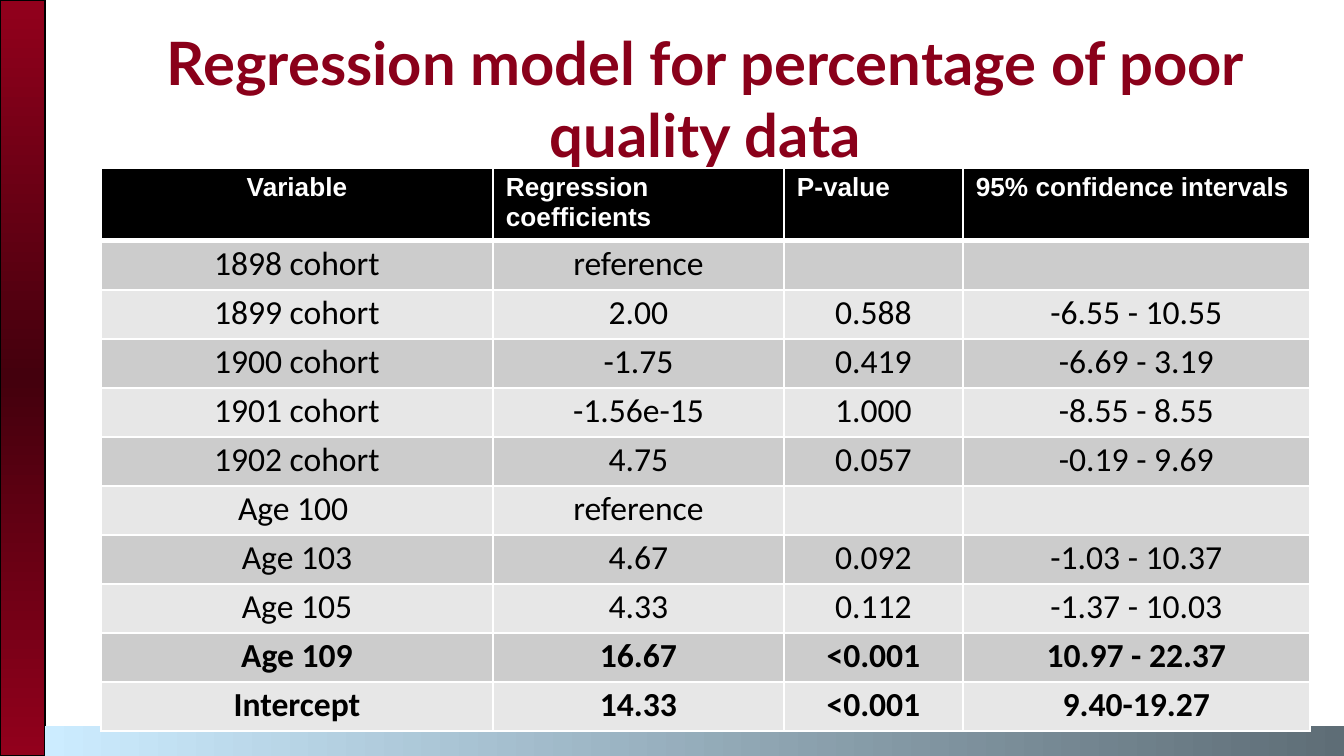
from lxml.etree import SubElement
from pptx import Presentation
from pptx.dml.color import RGBColor
from pptx.enum.shapes import MSO_SHAPE
from pptx.enum.text import MSO_ANCHOR, PP_ALIGN
from pptx.oxml.ns import qn
from pptx.util import Pt

PX = 914400 / 134.4
BLACK = RGBColor(0x00, 0x00, 0x00)
WHITE = RGBColor(0xFF, 0xFF, 0xFF)
CRIMSON = RGBColor(0x8A, 0x00, 0x1A)
RED = RGBColor(0x92, 0x00, 0x1C)
MAROON = RGBColor(0x44, 0x00, 0x0D)
SKY = RGBColor(0xCC, 0xEC, 0xFF)
SLATE = RGBColor(0x5E, 0x6D, 0x76)
BANDS = [RGBColor(0xE7, 0xE7, 0xE7), RGBColor(0xCC, 0xCC, 0xCC)]

TITLE = "Regression model for percentage of poor quality data"
HEADER = ("Variable", "Regression coefficients", "P-value", "95% confidence intervals")
ROWS = [
    ("1898 cohort", "reference", "", ""),
    ("1899 cohort", "2.00", "0.588", "-6.55 - 10.55"),
    ("1900 cohort", "-1.75", "0.419", "-6.69 - 3.19"),
    ("1901 cohort", "-1.56e-15", "1.000", "-8.55 - 8.55"),
    ("1902 cohort", "4.75", "0.057", "-0.19 - 9.69"),
    ("Age 100 ", "reference", "", ""),
    ("Age 103", "4.67", "0.092", "-1.03 - 10.37"),
    ("Age 105", "4.33", "0.112", "-1.37 - 10.03"),
    ("Age 109", "16.67", "<0.001", "10.97 - 22.37"),
    ("Intercept", "14.33", "<0.001", "9.40-19.27"),
]
BOLD_ROWS = {"Age 109", "Intercept"}
COLUMN_WIDTHS = (392, 291, 179, 347)
HEADER_HEIGHT, ROW_HEIGHT = 70, 49


def px(*lengths):
    """Turn pixel lengths into EMU."""
    return [round(length * PX) for length in lengths]


def write_text(frame, text, *, size, font, color, bold=False,
               align=PP_ALIGN.CENTER, line_spacing=None, margins=(13, 7)):
    """Write one formatted paragraph into a text frame or table cell."""
    side, edge = px(*margins)
    frame.margin_left = frame.margin_right = side
    frame.margin_top = frame.margin_bottom = edge
    paragraph = getattr(frame, "text_frame", frame).paragraphs[0]
    paragraph.alignment = align
    paragraph.line_spacing = line_spacing
    if text:
        run = paragraph.add_run()
        run.text = text
        run.font.size = Pt(size)
        run.font.name = font
        run.font.bold = bold
        run.font.color.rgb = color


def add_gradient_bar(slide, box, colors, angle):
    """Add a rectangle with evenly spaced gradient stops."""
    shape = slide.shapes.add_shape(MSO_SHAPE.RECTANGLE, *px(*box))
    gradient = SubElement(shape._element.spPr, qn("a:gradFill"), rotWithShape="1")
    stops = SubElement(gradient, qn("a:gsLst"))
    for index, color in enumerate(colors):
        position = 100000 * index // (len(colors) - 1)
        stop = SubElement(stops, qn("a:gs"), pos=str(position))
        SubElement(stop, qn("a:srgbClr"), val=str(color))
    SubElement(gradient, qn("a:lin"), ang=str(angle * 60000), scaled="0")
    shape.shadow.inherit = False
    shape.line.fill.background()
    return shape


def style_cell(cell, fill, top, bottom):
    """Give a cell white borders and a solid fill."""
    properties = cell._tc.get_or_add_tcPr()
    for side, width in (("L", 1), ("R", 1), ("T", top), ("B", bottom)):
        border = SubElement(properties, qn(f"a:ln{side}"), w=str(Pt(width)))
        solid = SubElement(border, qn("a:solidFill"))
        SubElement(solid, qn("a:srgbClr"), val=str(WHITE))
    cell.fill.solid()
    cell.fill.fore_color.rgb = fill


def add_regression_table(slide):
    """Add the table of regression results."""
    height = HEADER_HEIGHT + ROW_HEIGHT * len(ROWS)
    table = slide.shapes.add_table(
        len(ROWS) + 1, len(HEADER), *px(101, 168, sum(COLUMN_WIDTHS), height)).table
    for column, width in zip(table.columns, px(*COLUMN_WIDTHS)):
        column.width = width
    for index, values in enumerate([HEADER, *ROWS]):
        is_header = index == 0
        table.rows[index].height = px(HEADER_HEIGHT if is_header else ROW_HEIGHT)[0]
        for column, value in enumerate(values):
            cell = table.cell(index, column)
            if is_header:
                style_cell(cell, BLACK, 1, 3)
                write_text(cell, value, size=14, font="Arial", color=WHITE, bold=True,
                           align=PP_ALIGN.LEFT if column else PP_ALIGN.CENTER,
                           margins=(13, 5))
            else:
                style_cell(cell, BANDS[index % 2], 3 if index == 1 else 1, 1)
                write_text(cell, value, size=18, font="Calibri", color=BLACK,
                           bold=values[0] in BOLD_ROWS, line_spacing=1.07,
                           margins=(9, 0))


def main():
    """Build and save the slide."""
    presentation = Presentation()
    presentation.slide_width, presentation.slide_height = px(1344, 756)
    slide = presentation.slides.add_slide(presentation.slide_layouts[6])

    side_bar = add_gradient_bar(slide, (0, 0, 45, 756), (RED, MAROON, RED), 90)
    side_bar.line.color.rgb = BLACK
    side_bar.line.width = Pt(0.75)
    add_gradient_bar(slide, (45, 726, 1299, 30), (SKY, SLATE), 0)

    title = slide.shapes.add_textbox(*px(101, 25, 1209, 145)).text_frame
    title.word_wrap = True
    title.vertical_anchor = MSO_ANCHOR.MIDDLE
    write_text(title, TITLE, size=32, font="Lato", color=CRIMSON, bold=True)

    add_regression_table(slide)
    presentation.save("out.pptx")


if __name__ == "__main__":
    main()
